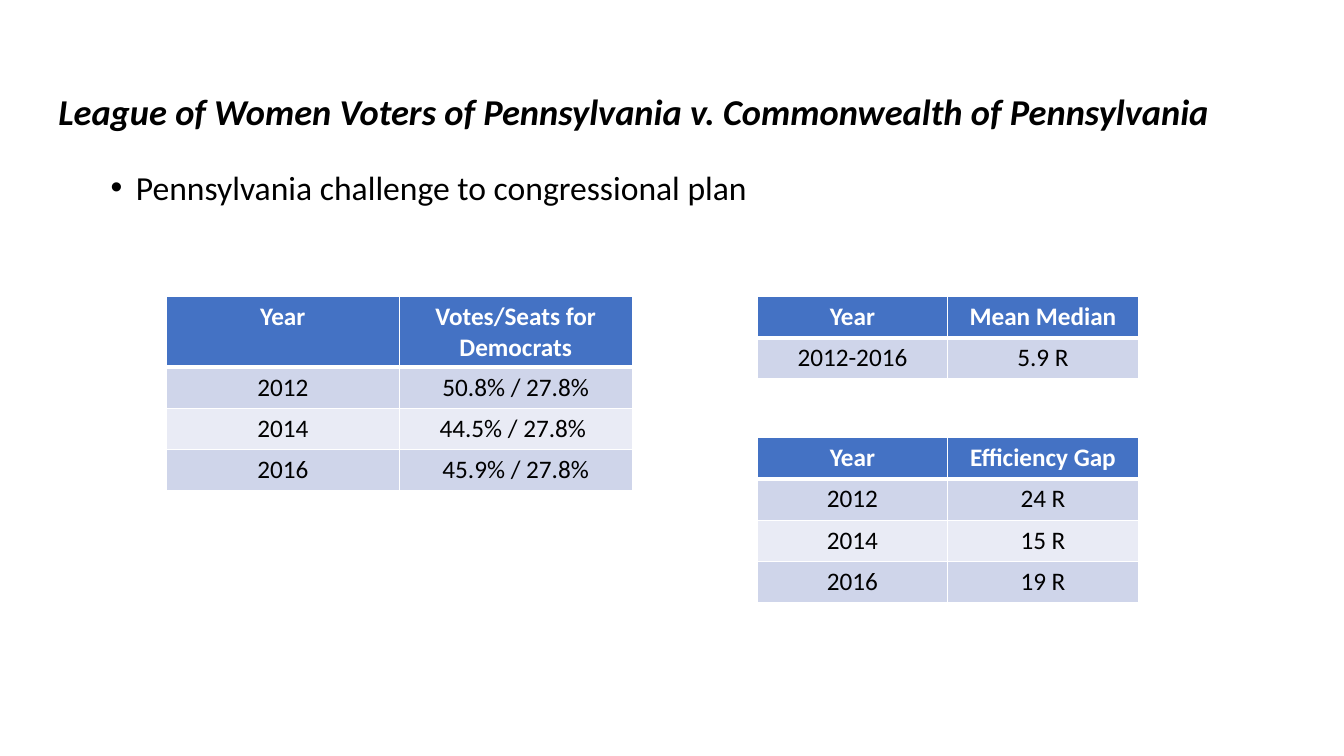
"""Build a slide on the Pennsylvania congressional plan challenge with three tables."""
from dataclasses import dataclass

import lxml.etree
import pptx
import pptx.dml.color
import pptx.enum.text
import pptx.oxml.ns
import pptx.slide
import pptx.table
import pptx.text.text
import pptx.util

Inches = pptx.util.Inches
RGBColor = pptx.dml.color.RGBColor
qn = pptx.oxml.ns.qn

FONT = "Calibri"
BLACK = RGBColor(0x00, 0x00, 0x00)
WHITE = RGBColor(0xFF, 0xFF, 0xFF)
HEADER_BLUE = RGBColor(0x44, 0x72, 0xC4)
DARK_BAND = RGBColor(0xCF, 0xD5, 0xEA)
LIGHT_BAND = RGBColor(0xE9, 0xEB, 0xF5)

ROW_HEIGHT = 0.41
THIN_BORDER = 1
HEADER_BORDER = 3


@dataclass(frozen=True)
class ResultTable:
    left: float
    top: float
    column_width: float
    rows: list[tuple[str, str]]
    header_height: float = ROW_HEIGHT


TABLES = [
    ResultTable(1.65, 2.94, 2.31, [
        ("Year", "Votes/Seats for Democrats"),
        ("2012", "50.8% / 27.8%"),
        ("2014", "44.5% / 27.8% "),
        ("2016", "45.9% / 27.8%"),
    ], header_height=0.7),
    ResultTable(7.51, 2.94, 1.89, [
        ("Year", "Mean Median"),
        ("2012-2016", "5.9 R"),
    ]),
    ResultTable(7.51, 4.34, 1.89, [
        ("Year", "Efficiency Gap"),
        ("2012", "24 R"),
        ("2014", "15 R"),
        ("2016", "19 R"),
    ]),
]


def style_font(font: pptx.text.text.Font, size: int, color: RGBColor,
               bold: bool = False, italic: bool = False) -> None:
    font.name = FONT
    font.size = pptx.util.Pt(size)
    font.color.rgb = color
    font.bold = bold
    font.italic = italic


def add_text(page: pptx.slide.Slide, left: float, top: float, width: float, height: float,
             text: str, size: int, bold: bool = False,
             italic: bool = False) -> pptx.text.text.TextFrame:
    box = page.shapes.add_textbox(Inches(left), Inches(top), Inches(width), Inches(height))
    frame = box.text_frame
    frame.word_wrap = True
    frame.text = text
    para = frame.paragraphs[0]
    para.line_spacing = 0.9
    style_font(para.runs[0].font, size, BLACK, bold, italic)
    return frame


def add_bullet(para: pptx.text.text._Paragraph, indent: float) -> None:
    properties = para._p.get_or_add_pPr()
    properties.set("marL", str(Inches(indent)))
    properties.set("indent", str(-Inches(indent)))
    lxml.etree.SubElement(properties, qn("a:buFont")).set("typeface", "Arial")
    lxml.etree.SubElement(properties, qn("a:buChar")).set("char", "•")


def set_borders(cell: pptx.table._Cell, top: int, bottom: int) -> None:
    properties = cell._tc.get_or_add_tcPr()
    widths = {"a:lnL": THIN_BORDER, "a:lnR": THIN_BORDER, "a:lnT": top, "a:lnB": bottom}
    for position, (side, width) in enumerate(widths.items()):
        line = lxml.etree.Element(qn(side), w=str(pptx.util.Pt(width)))
        fill = lxml.etree.SubElement(line, qn("a:solidFill"))
        lxml.etree.SubElement(fill, qn("a:srgbClr")).set("val", str(WHITE))
        properties.insert(position, line)


def style_cell(cell: pptx.table._Cell, row: int, text: str) -> None:
    is_header = row == 0
    band = DARK_BAND if row % 2 else LIGHT_BAND
    cell.fill.solid()
    cell.fill.fore_color.rgb = HEADER_BLUE if is_header else band
    set_borders(cell, HEADER_BORDER if row == 1 else THIN_BORDER,
                HEADER_BORDER if is_header else THIN_BORDER)
    cell.text_frame.text = text
    para = cell.text_frame.paragraphs[0]
    para.alignment = pptx.enum.text.PP_ALIGN.CENTER
    style_font(para.runs[0].font, 18, WHITE if is_header else BLACK, bold=is_header)


def add_result_table(page: pptx.slide.Slide, result: ResultTable) -> None:
    row_count, column_count = len(result.rows), len(result.rows[0])
    heights = [result.header_height] + [ROW_HEIGHT] * (row_count - 1)
    table = page.shapes.add_table(
        row_count, column_count, Inches(result.left), Inches(result.top),
        Inches(result.column_width * column_count), Inches(sum(heights))).table
    for row, (height, texts) in enumerate(zip(heights, result.rows)):
        table.rows[row].height = Inches(height)
        for column, text in enumerate(texts):
            style_cell(table.cell(row, column), row, text)


def main() -> None:
    deck = pptx.Presentation()
    deck.slide_width = Inches(13.33)
    deck.slide_height = Inches(7.5)
    page = deck.slides.add_slide(deck.slide_layouts[6])

    title = add_text(page, 0.48, 0.4, 12.36, 1.45,
                     "League of Women Voters of Pennsylvania v. Commonwealth of Pennsylvania",
                     26, bold=True, italic=True)
    title.vertical_anchor = pptx.enum.text.MSO_ANCHOR.MIDDLE

    body = add_text(page, 1, 1.65, 11.5, 0.66, "Pennsylvania challenge to congressional plan", 24)
    body.paragraphs[0].space_before = pptx.util.Pt(10)
    add_bullet(body.paragraphs[0], 0.25)

    for result in TABLES:
        add_result_table(page, result)
    deck.save("out.pptx")


if __name__ == "__main__":
    main()
